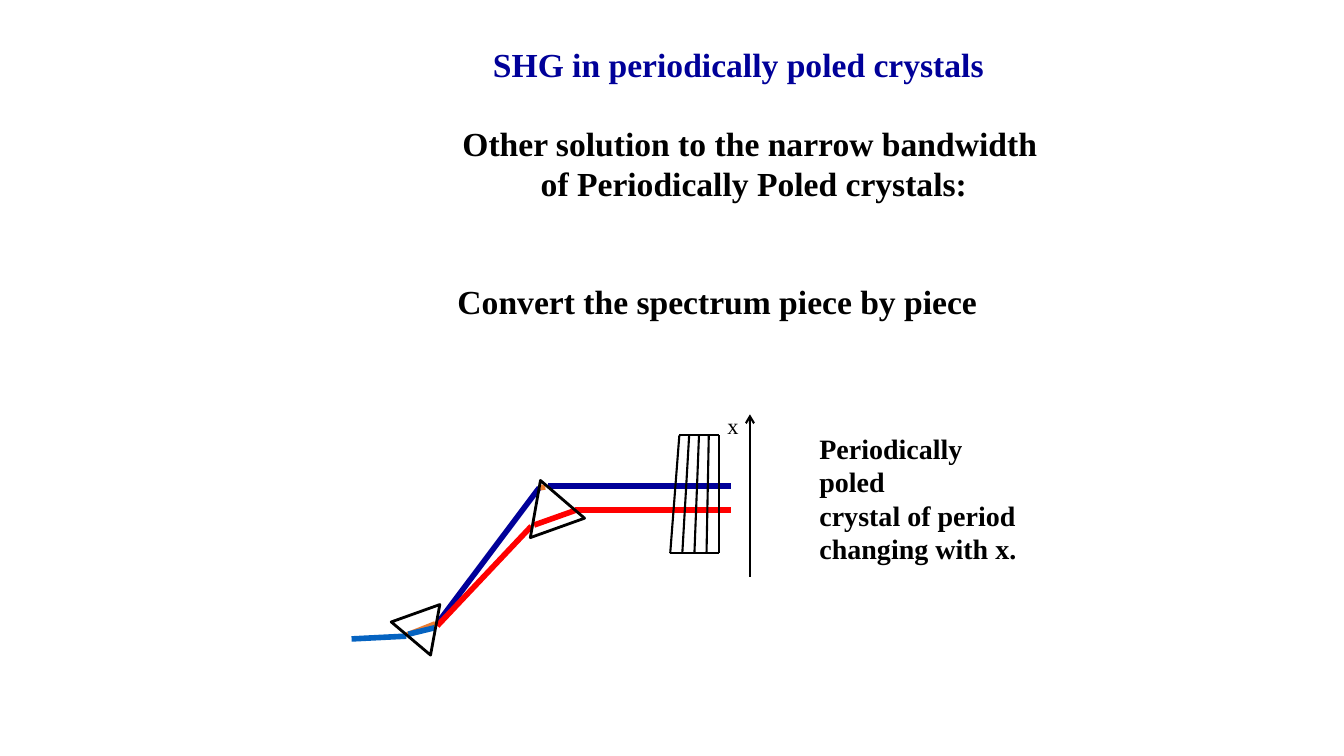
from lxml.etree import SubElement
from pptx import Presentation
from pptx.dml.color import RGBColor
from pptx.enum.shapes import MSO_CONNECTOR, MSO_SHAPE
from pptx.enum.text import MSO_ANCHOR, MSO_AUTO_SIZE, PP_ALIGN
from pptx.oxml.ns import qn
from pptx.util import Cm, Pt

FONT = "Times New Roman"
BLACK, NAVY, BLUE, ORANGE, RED = "000000", "000099", "0563C1", "ED7D31", "FF0000"
LEFT, CENTER = PP_ALIGN.LEFT, PP_ALIGN.CENTER

TITLE = ("SHG in periodically poled crystals", (12.17, 0.97, 12.88, 1.27))
LABELS = [
    ("Other solution to the narrow bandwidth \nof Periodically Poled crystals:",
     (11.38, 2.97, 15.24, 2.29), 24, True, CENTER, False),
    ("Convert the spectrum piece by piece",
     (11.28, 6.96, 13.61, 1.27), 24, True, LEFT, False),
    ("Periodically poled\ncrystal of period\nchanging with x.",
     (20.4, 10.74, 5.6, 3.64), 20, True, LEFT, True),
    ("x", (18.08, 10.26, 0.79, 0.94), 16, False, LEFT, False),
]
BEAMS = [
    (8.86, 16.1, 10.24, 16.03, BLUE),
    (10.26, 16, 10.97, 15.72, ORANGE),
    (10.29, 15.98, 10.95, 15.82, BLUE),
    (14.5, 12.85, 18.42, 12.85, RED),
    (11.05, 15.67, 13.59, 12.29, NAVY),
    (13.61, 12.29, 13.74, 12.27, ORANGE),
    (13.82, 12.24, 18.42, 12.24, NAVY),
    (13.46, 13.23, 14.53, 12.85, RED),
    (11.02, 15.77, 13.39, 13.26, RED),
]
PRISMS = [(10.01, 15.42, 1.3, 1.12, 160.3), (13.11, 12.07, 1.45, 1.27, 340.3)]
WALLS = 5
CRYSTAL_RIGHT, CRYSTAL_TOP, CRYSTAL_BOTTOM = 18.11, 10.97, 13.94
TOP_LEFT, BOTTOM_LEFT = 17.12, 16.89
AXIS = (18.9, 14.53, 18.9, 10.44)


def color(code):
    return RGBColor.from_string(code)


def write(box, text, size, bold, code, align, wrap):
    frame = box.text_frame
    frame.text = text
    frame.word_wrap = wrap
    frame.vertical_anchor = MSO_ANCHOR.TOP
    frame.auto_size = MSO_AUTO_SIZE.SHAPE_TO_FIT_TEXT
    for paragraph in frame.paragraphs:
        paragraph.alignment = align
        paragraph.line_spacing = 1.0
        paragraph.space_before = Pt(0)
        for run in paragraph.runs:
            run.font.name = FONT
            run.font.size = Pt(size)
            run.font.bold = bold
            run.font.color.rgb = color(code)


def draw_line(slide, ends, code, width):
    line = slide.shapes.add_connector(MSO_CONNECTOR.STRAIGHT, *map(Cm, ends))
    line.line.color.rgb = color(code)
    line.line.width = Pt(width)
    SubElement(line._element.spPr, qn("a:effectLst"))
    return line


def draw_prism(slide, left, top, width, height, angle):
    prism = slide.shapes.add_shape(
        MSO_SHAPE.ISOSCELES_TRIANGLE, Cm(left), Cm(top), Cm(width), Cm(height))
    prism.rotation = angle
    prism.shadow.inherit = False
    prism.fill.background()
    prism.line.color.rgb = color(BLACK)
    prism.line.width = Pt(2)


def draw_crystal(slide):
    for wall in range(WALLS):
        share = wall / (WALLS - 1)
        bottom_x = BOTTOM_LEFT + share * (CRYSTAL_RIGHT - BOTTOM_LEFT)
        top_x = TOP_LEFT + share * (CRYSTAL_RIGHT - TOP_LEFT)
        draw_line(slide, (bottom_x, CRYSTAL_BOTTOM, top_x, CRYSTAL_TOP), BLACK, 1.5)
    for left, y in ((TOP_LEFT, CRYSTAL_TOP), (BOTTOM_LEFT, CRYSTAL_BOTTOM)):
        draw_line(slide, (left, y, CRYSTAL_RIGHT, y), BLACK, 1.5)


def main():
    deck = Presentation()
    deck.slide_width, deck.slide_height = Cm(33.87), Cm(19.05)
    slide = deck.slides.add_slide(deck.slide_layouts[5])

    heading, place = TITLE
    title = slide.shapes.title
    title.left, title.top, title.width, title.height = map(Cm, place)
    write(title, heading, 24, True, NAVY, LEFT, False)

    for text, place, size, bold, align, wrap in LABELS:
        label = slide.shapes.add_textbox(*map(Cm, place))
        write(label, text, size, bold, BLACK, align, wrap)

    for *ends, code in BEAMS:
        draw_line(slide, ends, code, 4)
    for prism in PRISMS:
        draw_prism(slide, *prism)
    draw_crystal(slide)

    axis = draw_line(slide, AXIS, BLACK, 1.5)
    SubElement(axis.line._get_or_add_ln(), qn("a:tailEnd"), type="arrow")

    deck.save("out.pptx")


if __name__ == "__main__":
    main()
